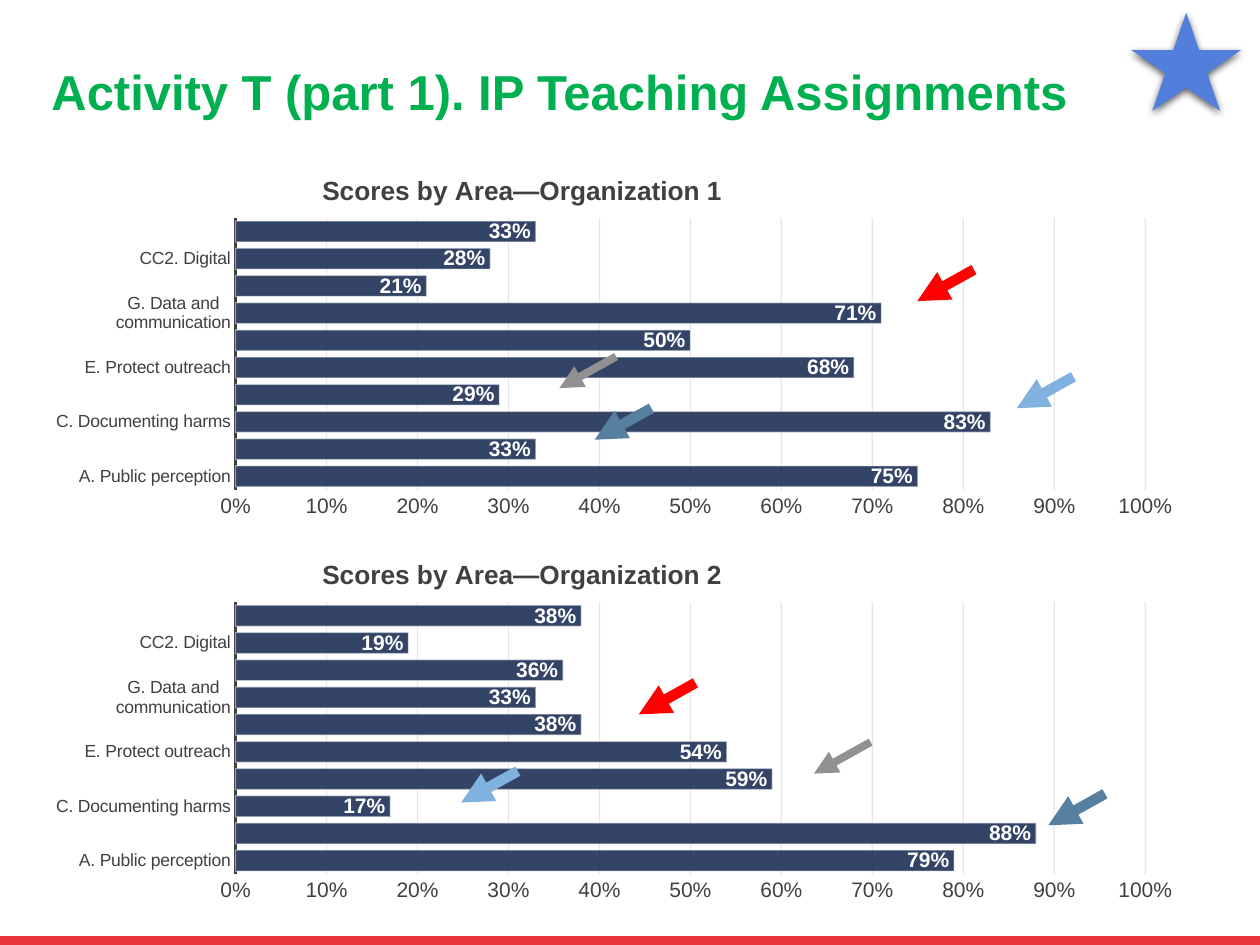
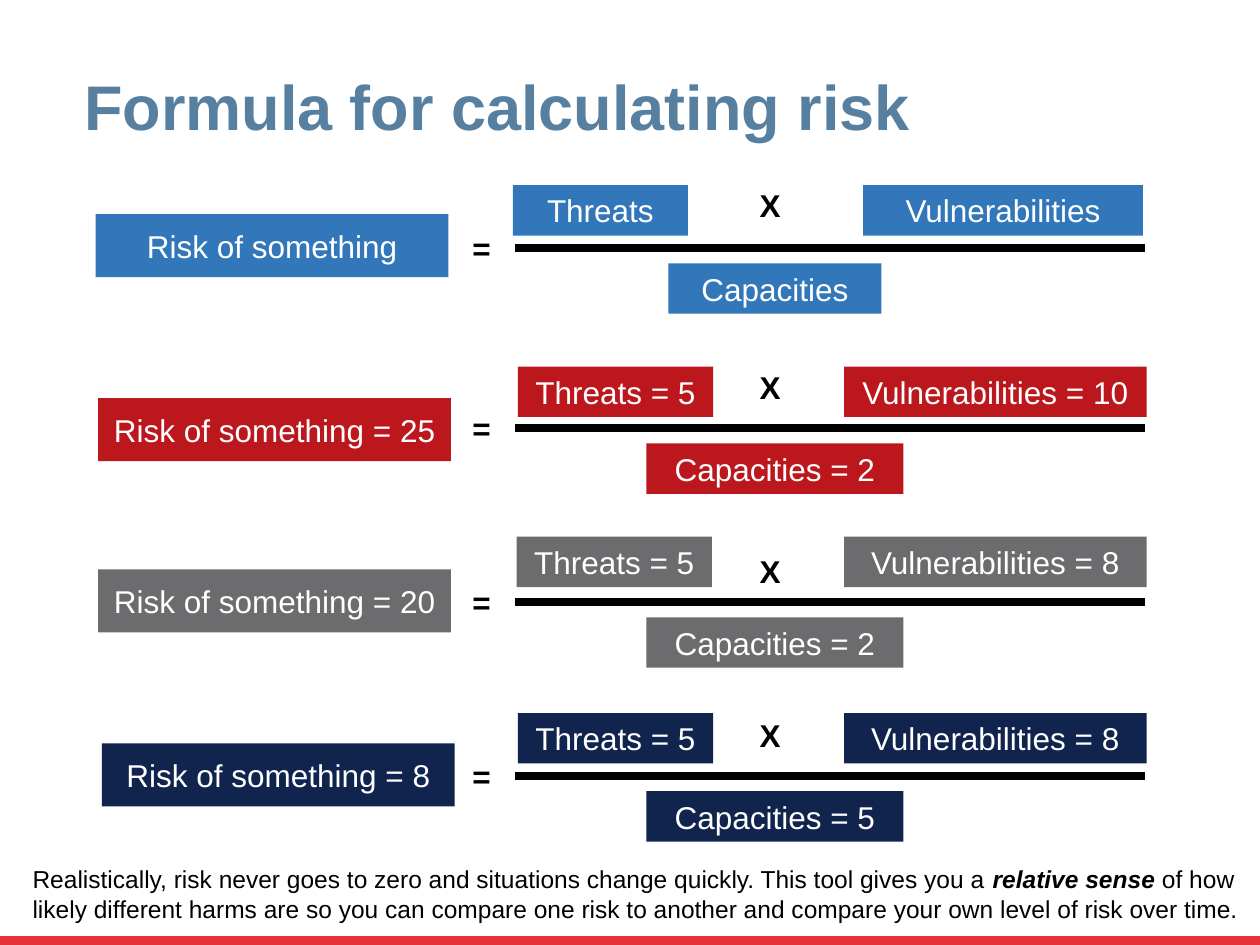
import dataclasses

import lxml.etree
import pptx
import pptx.chart.data
import pptx.dml.color
import pptx.enum.chart
import pptx.enum.shapes
import pptx.enum.text
import pptx.oxml
import pptx.oxml.ns
import pptx.util

Inches = pptx.util.Inches
Pt = pptx.util.Pt
qn = pptx.oxml.ns.qn
SHAPES = pptx.enum.shapes.MSO_SHAPE

FONT = "Arial"
WHITE, BLACK, DARK_GREY = "FFFFFF", "000000", "404040"
BAND_RED, GREEN, STEEL, STAR_BLUE = "E73439", "00B050", "577F9F", "527FDB"
BLUE, CRIMSON, GREY, NAVY = "3177B9", "BC171D", "6C6C6F", "10244D"
ARROW_RED, ARROW_GREY, ARROW_SKY = "FF0000", "919194", "81B1DE"

# Every second bar is labelled.
AREAS = [
    "A. Public perception", "", "C. Documenting harms", "",
    "E. Protect outreach", "", "G. Data and communication", "",
    "CC2. Digital", "",
]


def rgb(colour):
    return pptx.dml.color.RGBColor.from_string(colour)


def set_alpha(element, percent):
    """Make the first solid colour below an element partly transparent."""
    colour = element.find(".//" + qn("a:srgbClr"))
    lxml.etree.SubElement(colour, qn("a:alpha")).set("val", str(percent * 1000))


def set_layout(parent, index, inner=False, **fractions):
    """Place a chart part by fractions (x, y, w, h) of the chart frame."""
    for old in parent.findall(qn("c:layout")):
        parent.remove(old)
    layout = lxml.etree.Element(qn("c:layout"))
    manual = lxml.etree.SubElement(layout, qn("c:manualLayout"))
    settings = {"layoutTarget": "inner"} if inner else {}
    settings |= {"xMode": "edge", "yMode": "edge"} | fractions
    for name, value in settings.items():
        lxml.etree.SubElement(manual, qn("c:" + name)).set("val", str(value))
    parent.insert(index, layout)


class SlideBuilder:
    """Holds the deck, its style and the slide being built."""

    def __init__(self):
        self.deck = pptx.Presentation()
        self.deck.slide_width = Inches(10)
        self.deck.slide_height = Inches(7.5)
        self.slide = None

    def style(self, font, size, colour, bold=False, italic=False):
        font.name = FONT
        font.size = Pt(size)
        font.color.rgb = rgb(colour)
        font.bold = bold
        font.italic = italic

    def new_slide(self, title, left, top, size, colour):
        self.slide = self.deck.slides.add_slide(self.deck.slide_layouts[6])
        self.shape(SHAPES.RECTANGLE, 0, 7.43, 10, 0.08, BAND_RED)
        box = self.text([(title, True, False)], left, top, 8.62, 0.87, size, colour)
        box.text_frame.vertical_anchor = pptx.enum.text.MSO_ANCHOR.BOTTOM
        box.text_frame.paragraphs[0].line_spacing = 0.9

    def text(self, spans, left, top, width, height, size, colour=BLACK):
        """Add one paragraph made of (words, bold, italic) spans."""
        box = self.slide.shapes.add_textbox(
            Inches(left), Inches(top), Inches(width), Inches(height))
        box.text_frame.word_wrap = True
        para = box.text_frame.paragraphs[0]
        for words, bold, italic in spans:
            span = para.add_run()
            span.text = words
            self.style(span.font, size, colour, bold, italic)
        return box

    def shape(self, kind, left, top, width, height, fill):
        shape = self.slide.shapes.add_shape(
            kind, Inches(left), Inches(top), Inches(width), Inches(height))
        shape.shadow.inherit = False
        shape.fill.solid()
        shape.fill.fore_color.rgb = rgb(fill)
        shape.line.fill.background()
        return shape

    def label(self, words, left, top, width, height, fill):
        shape = self.shape(SHAPES.RECTANGLE, left, top, width, height, fill)
        frame = shape.text_frame
        frame.text = words
        frame.word_wrap = True
        frame.vertical_anchor = pptx.enum.text.MSO_ANCHOR.MIDDLE
        frame.paragraphs[0].alignment = pptx.enum.text.PP_ALIGN.CENTER
        self.style(frame.paragraphs[0].runs[0].font, 18, WHITE)

    def star(self, left, top, width, height):
        star = self.shape(SHAPES.STAR_5_POINT, left, top, width, height, STAR_BLUE)
        effects = star._element.spPr.find(qn("a:effectLst"))
        shadow = lxml.etree.SubElement(
            effects, qn("a:outerShdw"), blurRad=str(Pt(4.5)), dist=str(Pt(1.5)),
            dir="5400000", rotWithShape="0")
        lxml.etree.SubElement(shadow, qn("a:srgbClr"), val=BLACK)
        set_alpha(shadow, 63)

    def line(self, start, end, colour, width, arrow=False):
        line = self.slide.shapes.add_connector(
            pptx.enum.shapes.MSO_CONNECTOR.STRAIGHT,
            *(Inches(length) for length in (*start, *end)))
        line.line.color.rgb = rgb(colour)
        line.line.width = Pt(width)
        if arrow:
            lxml.etree.SubElement(
                line.line._get_or_add_ln(), qn("a:tailEnd"), type="triangle")
        lxml.etree.SubElement(line._element.spPr, qn("a:effectLst"))

    def bar_chart(self, title, values, left, top, width, height, gap):
        data = pptx.chart.data.CategoryChartData(number_format="0%")
        data.categories = AREAS
        data.add_series("Series 1", values)
        chart = self.slide.shapes.add_chart(
            pptx.enum.chart.XL_CHART_TYPE.BAR_CLUSTERED, Inches(left),
            Inches(top), Inches(width), Inches(height), data).chart
        self.style(chart.font, 10, BLACK)
        chart.has_legend = False

        heading = chart.chart_title
        heading.text_frame.text = title
        self.style(heading.text_frame.paragraphs[0].runs[0].font, 15, DARK_GREY, True)
        set_layout(heading._element, 1, x=2.25 / width, y=0.13 / height)
        plot_area = chart._chartSpace.find(".//" + qn("c:plotArea"))
        set_layout(plot_area, 0, True, x=1.6 / width, y=0.52 / height,
                   w=7.22 / width, h=2.16 / height)

        self.axes(chart)
        plot = chart.plots[0]
        plot.gap_width = gap
        plot.vary_by_categories = False
        self.bars(plot)

    def axes(self, chart):
        for axis, size in ((chart.category_axis, 10), (chart.value_axis, 12)):
            axis.major_tick_mark = pptx.enum.chart.XL_TICK_MARK.NONE
            axis.minor_tick_mark = pptx.enum.chart.XL_TICK_MARK.NONE
            self.style(axis.tick_labels.font, size, DARK_GREY)
        chart.category_axis.format.line.color.rgb = rgb(DARK_GREY)
        chart.category_axis.format.line.width = Pt(1.5)

        scale = chart.value_axis
        scale.minimum_scale, scale.maximum_scale, scale.major_unit = 0, 1, 0.1
        scale.tick_labels.number_format = "0%"
        scale.tick_labels.number_format_is_linked = False
        scale.format.line.fill.background()
        scale.has_major_gridlines = True
        grid = scale.major_gridlines.format.line
        grid.color.rgb = rgb("0D0D0D")
        grid.width = Pt(0.75)
        set_alpha(grid._get_or_add_ln(), 10)

    def bars(self, plot):
        bars = plot.series[0].format
        bars.fill.solid()
        bars.fill.fore_color.rgb = rgb(NAVY)
        set_alpha(plot.series[0]._element, 85)
        bars.line.color.rgb = rgb(WHITE)
        bars.line.width = Pt(0.75)
        set_alpha(bars.line._get_or_add_ln(), 50)

        plot.has_data_labels = True
        labels = plot.data_labels
        labels.show_value = True
        labels.number_format = "0%"
        labels.number_format_is_linked = False
        labels.position = pptx.enum.chart.XL_LABEL_POSITION.INSIDE_END
        self.style(labels.font, 12, WHITE, True)


@dataclasses.dataclass
class Formula:
    """One risk equation; lengths in inches, scores empty for the general rule."""
    colour: str
    bar_top: float
    risk_left: float
    risk_top: float
    threats_left: float
    threats_top: float
    times_top: float
    scores: tuple = ()
    threats_width: float = 1.55
    vulnerabilities_left: float = 6.7
    vulnerabilities_width: float = 2.4
    capacities_width: float = 2.04

    def draw(self, builder):
        names = ["Risk of something", "Threats", "Vulnerabilities", "Capacities"]
        if self.scores:
            names = [f"{name} = {score}" for name, score in zip(names, self.scores)]
        capacities_left = 6.15 - self.capacities_width / 2
        places = [
            (self.risk_left, self.risk_top, 2.8, 0.5),
            (self.threats_left, self.threats_top, self.threats_width, 0.4),
            (self.vulnerabilities_left, self.threats_top,
             self.vulnerabilities_width, 0.4),
            (capacities_left, self.bar_top + 0.12, self.capacities_width, 0.4),
        ]
        for name, place in zip(names, places):
            builder.label(name, *place, self.colour)
        builder.line((4.09, self.bar_top), (9.09, self.bar_top), BLACK, 4.5)
        builder.text([("X", True, False)], 5.93, self.times_top, 0.44, 0.4, 18)
        builder.text([("=", True, False)], 3.65, self.bar_top - 0.2, 0.45, 0.4, 18)


def build_scores(builder):
    builder.new_slide("Activity T (part 1). IP Teaching Assignments",
                      0.31, 0.14, 28, GREEN)
    builder.bar_chart(
        "Scores by Area—Organization 1",
        [0.75, 0.33, 0.83, 0.29, 0.68, 0.5, 0.71, 0.21, 0.28, 0.33],
        0.27, 1.21, 9.22, 2.96, 30)
    builder.bar_chart(
        "Scores by Area—Organization 2",
        [0.79, 0.88, 0.17, 0.59, 0.54, 0.38, 0.33, 0.36, 0.19, 0.38],
        0.27, 4.26, 9.23, 2.96, 29)
    arrows = [
        (ARROW_RED, 6, (7.73, 2.14), (5.52, 5.42)),
        (ARROW_GREY, 4.5, (4.89, 2.83), (6.91, 5.89)),
        (ARROW_SKY, 6, (8.52, 2.99), (4.11, 6.12)),
        (STEEL, 6, (5.17, 3.24), (8.77, 6.3)),
    ]
    for colour, width, *starts in arrows:
        for x, y in starts:
            builder.line((x, y), (x - 0.45, y + 0.25), colour, width, arrow=True)
    builder.star(8.98, 0.1, 0.87, 0.78)


def build_formulas(builder):
    builder.new_slide("Formula for calculating risk", 0.57, 0.32, 36, STEEL)
    formulas = [
        Formula(BLUE, 1.97, 0.76, 1.7, 4.07, 1.47, 1.43, (), 1.39, 6.85, 2.22, 1.69),
        Formula(CRIMSON, 3.4, 0.78, 3.16, 4.11, 2.91, 2.87, (25, 5, 10, 2)),
        Formula(GREY, 4.78, 0.78, 4.52, 4.1, 4.26, 4.33, (20, 5, 8, 2)),
        Formula(NAVY, 6.16, 0.81, 5.9, 4.11, 5.66, 5.63, (8, 5, 8, 5)),
    ]
    for formula in formulas:
        formula.draw(builder)
    builder.text([
        ("Realistically, risk never goes to zero and situations change quickly. "
         "This tool gives you a ", False, False),
        ("relative sense ", True, True),
        ("of how likely different harms are so you can compare one risk to another "
         "and compare your own level of risk over time.", False, False),
    ], 0.16, 6.81, 9.82, 0.57, 14)


def main():
    builder = SlideBuilder()
    build_scores(builder)
    build_formulas(builder)
    builder.deck.save("out.pptx")


if __name__ == "__main__":
    main()
